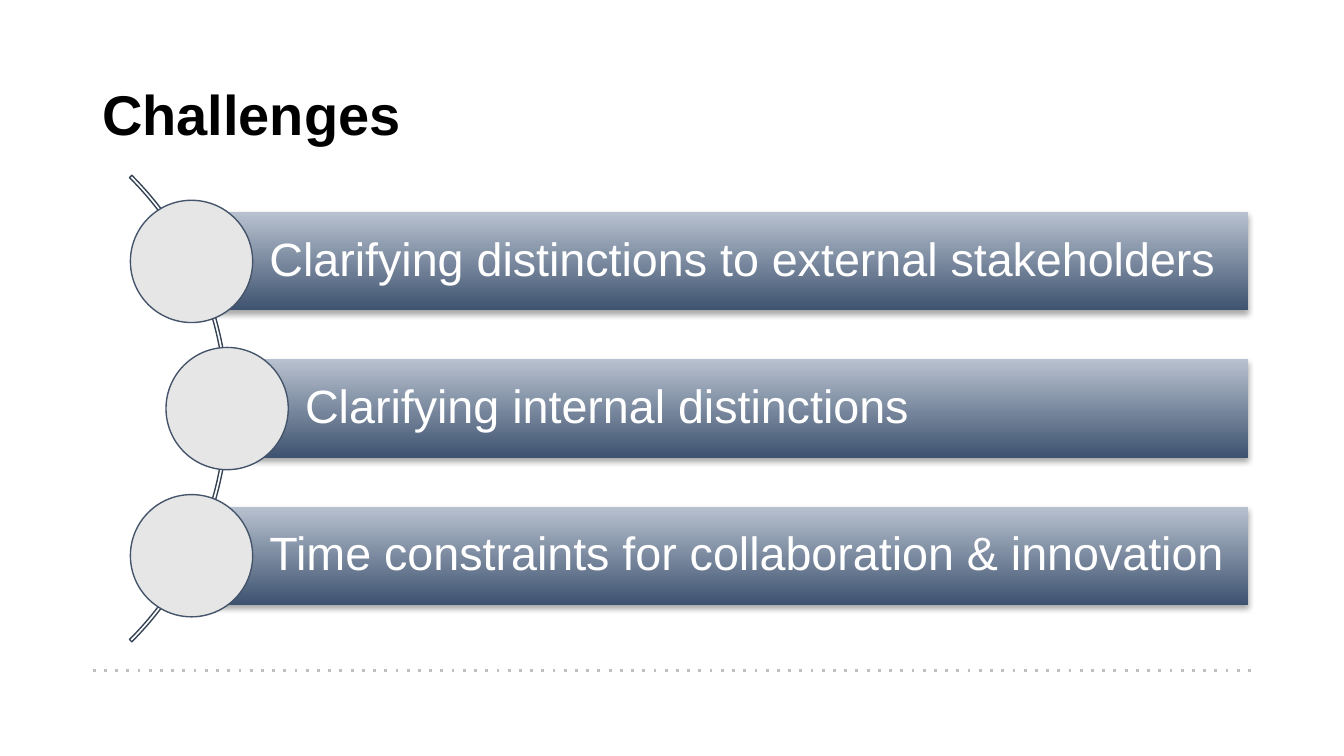
from lxml import etree
from pptx import Presentation
from pptx.dml.color import RGBColor
from pptx.enum.dml import MSO_LINE
from pptx.enum.shapes import MSO_CONNECTOR, MSO_SHAPE
from pptx.enum.text import MSO_ANCHOR, MSO_AUTO_SIZE, PP_ALIGN
from pptx.oxml.ns import qn
from pptx.util import Pt

PX = 4572
WHITE = RGBColor(0xFF, 0xFF, 0xFF)
BLACK = RGBColor(0x00, 0x00, 0x00)
NAVY = RGBColor(0x3E, 0x53, 0x70)
MIST = RGBColor(0xB8, 0xC1, 0xCF)
SLATE = RGBColor(0x44, 0x54, 0x6A)
INK = RGBColor(0x36, 0x43, 0x55)
PALE = RGBColor(0xE7, 0xE6, 0xE6)
GRAY = RGBColor(0xC0, 0xC0, 0xC0)
RECT, OVAL, ARC = MSO_SHAPE.RECTANGLE, MSO_SHAPE.OVAL, MSO_SHAPE.BLOCK_ARC
TOP, MIDDLE = MSO_ANCHOR.TOP, MSO_ANCHOR.MIDDLE
LEFT, FIXED = PP_ALIGN.LEFT, MSO_AUTO_SIZE.NONE
LINE, DOT = MSO_CONNECTOR.STRAIGHT, MSO_LINE.ROUND_DOT
ITEMS = [
    ("Clarifying distinctions to external stakeholders", 0),
    ("Clarifying internal distinctions", 53),
    ("Time constraints for collaboration & innovation", 0),
]


def write(shape, text, size, color, bold=False, anchor=TOP, pads=(20, 10, 20, 10), lead=1.0):
    """Put one formatted paragraph into a shape."""
    frame = shape.text_frame
    frame.text = text
    frame.word_wrap = True
    frame.auto_size = FIXED
    frame.vertical_anchor = anchor
    (frame.margin_left, frame.margin_top,
     frame.margin_right, frame.margin_bottom) = [pad * PX for pad in pads]
    para = frame.paragraphs[0]
    para.alignment = LEFT
    para.line_spacing = lead
    font = para.runs[0].font
    font.name, font.size, font.bold = "Arial", Pt(size), bold
    font.color.rgb = color


def draw(slide, kind, box, fill=None, line=None):
    """Add a flat preset shape."""
    shape = slide.shapes.add_shape(kind, *[n * PX for n in box])
    shape.shadow.inherit = False
    if fill is None:
        shape.fill.background()
    else:
        shape.fill.solid()
        shape.fill.fore_color.rgb = fill
    if line is None:
        shape.line.fill.background()
    else:
        shape.line.color.rgb = line
        shape.line.width = Pt(0.75)
    return shape


def shade(shape):
    """Give a shape the blue gradient and a soft drop shadow."""
    shape.fill.gradient()
    shape.fill.gradient_angle = 90
    for stop, color in zip(shape.fill.gradient_stops, (NAVY, MIST)):
        stop.color.rgb = color
    effects = shape._element.spPr.find(qn("a:effectLst"))
    cast = etree.SubElement(effects, qn("a:outerShdw"), blurRad="40000",
                            dist="23000", dir="5400000", rotWithShape="0")
    tint = etree.SubElement(cast, qn("a:srgbClr"), val="000000")
    etree.SubElement(tint, qn("a:alpha"), val="35000")


def head(slide, box):
    """Place the slide title."""
    title = slide.shapes.title
    title.left, title.top, title.width, title.height = [n * PX for n in box]
    write(title, "Challenges", 30, BLACK, bold=True, lead=0.8)


def rule(slide, left, right, y):
    """Draw the dotted line at the foot."""
    line = slide.shapes.add_connector(LINE, left * PX, y * PX, right * PX, y * PX)
    line.line.color.rgb = GRAY
    line.line.width = Pt(1.5)
    line.line.dash_style = DOT
    props = line._element.spPr
    props.find(qn("a:ln")).find(qn("a:prstDash")).set("val", "dot")
    etree.SubElement(props, qn("a:effectLst"))


def curve(slide, box):
    """Draw the arc and the bars that hang on it."""
    left, top, width, height = box
    mid, pitch, tall, disc = top + height // 2, 219, 146, 182
    arc = draw(slide, ARC, (left - 836, top, height, height), line=INK)
    for i, value in enumerate((189, 27, 0.005)):
        arc.adjustments[i] = value
    for i, (text, shift) in enumerate(ITEMS):
        y = mid + (i - 1) * pitch
        x = left + shift
        start = x + disc // 2
        bar = draw(slide, RECT, (start, y - tall // 2, left + width - start, tall), NAVY)
        shade(bar)
        write(bar, text, 25, WHITE, anchor=MIDDLE, pads=(116, 14, 14, 14), lead=0.9)
        draw(slide, OVAL, (x, y - disc // 2, disc, disc), PALE, SLATE)


def main():
    """Build and save the slide."""
    deck = Presentation()
    deck.slide_width, deck.slide_height = 2000 * PX, 1125 * PX
    slide = deck.slides.add_slide(deck.slide_layouts[5])
    rule(slide, 138, 1864, 998)
    head(slide, (132, 128, 1724, 116))
    curve(slide, (194, 117, 1663, 982))
    deck.save("out.pptx")


if __name__ == "__main__":
    main()
